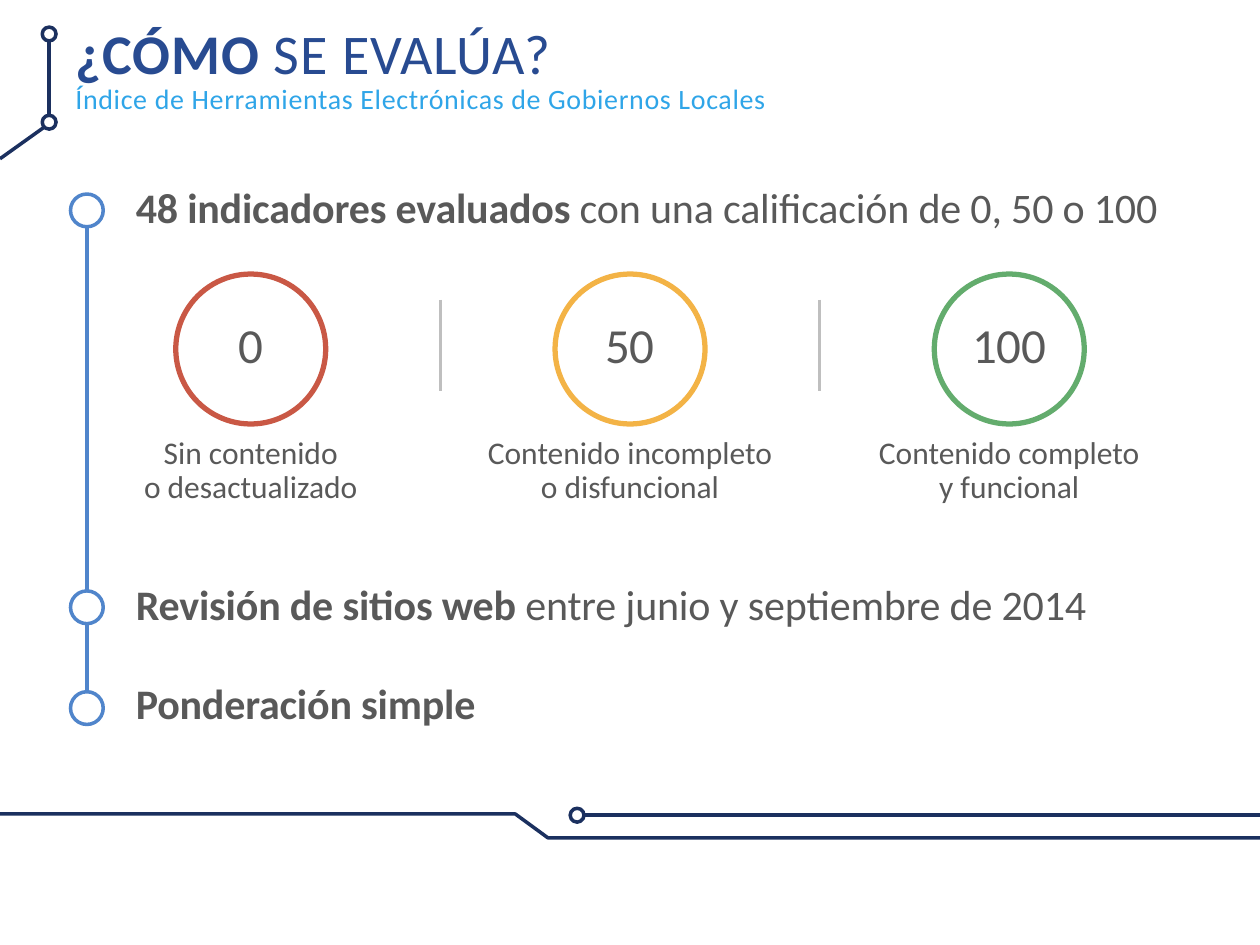
from lxml import etree
from pptx import Presentation
from pptx.dml.color import RGBColor
from pptx.enum.shapes import MSO_CONNECTOR, MSO_SHAPE
from pptx.enum.text import MSO_ANCHOR, MSO_AUTO_SIZE, PP_ALIGN
from pptx.oxml.ns import qn
from pptx.util import Inches, Pt

STRAIGHT = MSO_CONNECTOR.STRAIGHT
ELLIPSE = MSO_SHAPE.OVAL
LEFT, CENTER = PP_ALIGN.LEFT, PP_ALIGN.CENTER
TOP, MIDDLE = MSO_ANCHOR.TOP, MSO_ANCHOR.MIDDLE
GROW = MSO_AUTO_SIZE.SHAPE_TO_FIT_TEXT

WIDTH, HEIGHT = 10, 7.5
NAVY, BLUE, SKY, STEEL = "1B305F", "284B91", "2FA5E8", "5085CB"
GRAY, SILVER, WHITE = "595959", "BFBFBF", "FFFFFF"
COLUMN_STEP = 3.01
TIMELINE_X = 0.69
MILESTONES_Y = (1.67, 4.82, 5.62)
SCORES = (
    ("0", "C95845", ("Sin contenido", "o desactualizado"), 1.92),
    ("50", "F3B346", ("Contenido incompleto", "o disfuncional"), 2.49),
    ("100", "63AC6D", ("Contenido completo", "y funcional"), 2.3),
)


def color(hex_value):
    """Turn a hex string into a colour."""
    return RGBColor.from_string(hex_value)


def style_line(line, hex_value, weight):
    """Set the colour and the weight of a line."""
    line.color.rgb = color(hex_value)
    line.width = Pt(weight)


def add_line(slide, start, end, hex_value, weight=2):
    """Draw a straight line without shadow."""
    connector = slide.shapes.add_connector(
        STRAIGHT, *(Inches(length) for length in (*start, *end)))
    style_line(connector.line, hex_value, weight)
    etree.SubElement(connector._element.spPr, qn("a:effectLst"))


def add_circle(slide, center, diameter, hex_value, weight=2):
    """Draw a white circle with a coloured outline around a center."""
    left, top = (Inches(middle - diameter / 2) for middle in center)
    circle = slide.shapes.add_shape(
        ELLIPSE, left, top, Inches(diameter), Inches(diameter))
    circle.shadow.inherit = False
    circle.fill.solid()
    circle.fill.fore_color.rgb = color(WHITE)
    style_line(circle.line, hex_value, weight)
    return circle


def add_path(slide, points, hex_value):
    """Draw an open outline through the points."""
    first, *others = [(Inches(x), Inches(y)) for x, y in points]
    builder = slide.shapes.build_freeform(*first, scale=1.0)
    builder.add_line_segments(others, close=False)
    outline = builder.convert_to_shape()
    outline.shadow.inherit = False
    outline.fill.background()
    style_line(outline.line, hex_value, 2)


def write(frame, paragraphs, size, hex_value, spacing=0, align=LEFT, leading=1.0):
    """Fill a frame with paragraphs, each a list of (text, bold) runs."""
    for index, runs in enumerate(paragraphs):
        paragraph = frame.paragraphs[0] if index == 0 else frame.add_paragraph()
        paragraph.alignment = align
        paragraph.line_spacing = leading
        for text, bold in runs:
            run = paragraph.add_run()
            run.text = text
            run.font.name = "Calibri"
            run.font.size = Pt(size)
            run.font.bold = bold
            run.font.color.rgb = color(hex_value)
            run.font._element.set("spc", str(round(spacing * 100)))


def add_text(slide, box, paragraphs, size, hex_value, wrap=False, **style):
    """Add a text box that grows with its text."""
    frame = slide.shapes.add_textbox(*(Inches(length) for length in box)).text_frame
    frame.word_wrap = wrap
    frame.auto_size = GROW
    write(frame, paragraphs, size, hex_value, **style)
    return frame


def add_heading(slide):
    """Place the title and the subtitle."""
    title = slide.shapes.title
    title.left, title.top, title.width, title.height = (
        Inches(length) for length in (0.5, 0.16, 3.98, 0.59))
    frame = title.text_frame
    frame.word_wrap = False
    frame.auto_size = GROW
    frame.vertical_anchor = TOP
    write(frame, [[("¿CÓMO ", True), ("SE EVALÚA?", False)]],
          32, BLUE, spacing=0.5, leading=0.9)
    subtitle = "Índice de Herramientas Electrónicas de Gobiernos Locales"
    add_text(slide, (0.5, 0.63, 5.78, 0.35), [[(subtitle, False)]],
             16, SKY, spacing=0.4, leading=0.9)


def add_circuit(slide):
    """Draw the navy circuit lines beside the title and at the foot."""
    add_path(slide, [(0, 6.46), (4.09, 6.46), (4.35, 6.65), (WIDTH, 6.65)], NAVY)
    add_line(slide, (4.64, 6.47), (WIDTH, 6.47), NAVY)
    add_line(slide, (0.39, 0.33), (0.39, 0.92), NAVY)
    add_line(slide, (0.35, 1.01), (0, 1.26), NAVY)
    for node in ((4.58, 6.47), (0.39, 0.97), (0.39, 0.27)):
        add_circle(slide, node, 0.11, NAVY)


def add_timeline(slide):
    """Draw the milestones with their statements."""
    add_line(slide, (TIMELINE_X, MILESTONES_Y[0]), (TIMELINE_X, MILESTONES_Y[-1]), STEEL)
    for y in MILESTONES_Y:
        add_circle(slide, (TIMELINE_X, y), 0.26, STEEL)
    statements = [
        [("48 indicadores evaluados ", True), ("con una calificación de 0, 50 o 100", False)],
        [("Revisión de sitios web ", True), ("entre junio y septiembre de 2014", False)],
        [("Ponderación simple", True)],
    ]
    frame = add_text(slide, (0.98, 1.39, 8.4, 4.49), statements, 24, GRAY,
                     wrap=True, spacing=-0.1)
    for paragraph, gap in zip(frame.paragraphs, (198, 28, 28)):
        paragraph.space_after = Pt(gap)


def add_scores(slide):
    """Draw one column per score, with separators between them."""
    for column, (score, hue, caption, width) in enumerate(SCORES):
        x = WIDTH / 2 + (column - 1) * COLUMN_STEP
        frame = add_circle(slide, (x, 2.77), 1.19, hue, 3).text_frame
        frame.vertical_anchor = MIDDLE
        write(frame, [[(score, False)]], 28, GRAY,
              spacing=-0.3, align=CENTER, leading=0.8)
        add_text(slide, (x - width / 2, 3.42, width, 0.65),
                 [[(line, False)] for line in caption], 18, GRAY,
                 align=CENTER, leading=0.9)
        if column:
            border = x - COLUMN_STEP / 2
            add_line(slide, (border, 2.38), (border, 3.1), SILVER, 1.5)


def main():
    """Build the slide and save it."""
    deck = Presentation()
    deck.slide_width, deck.slide_height = Inches(WIDTH), Inches(HEIGHT)
    slide = deck.slides.add_slide(deck.slide_layouts.get_by_name("Title Only"))
    add_circuit(slide)
    add_timeline(slide)
    add_scores(slide)
    add_heading(slide)
    deck.save("out.pptx")


if __name__ == "__main__":
    main()
